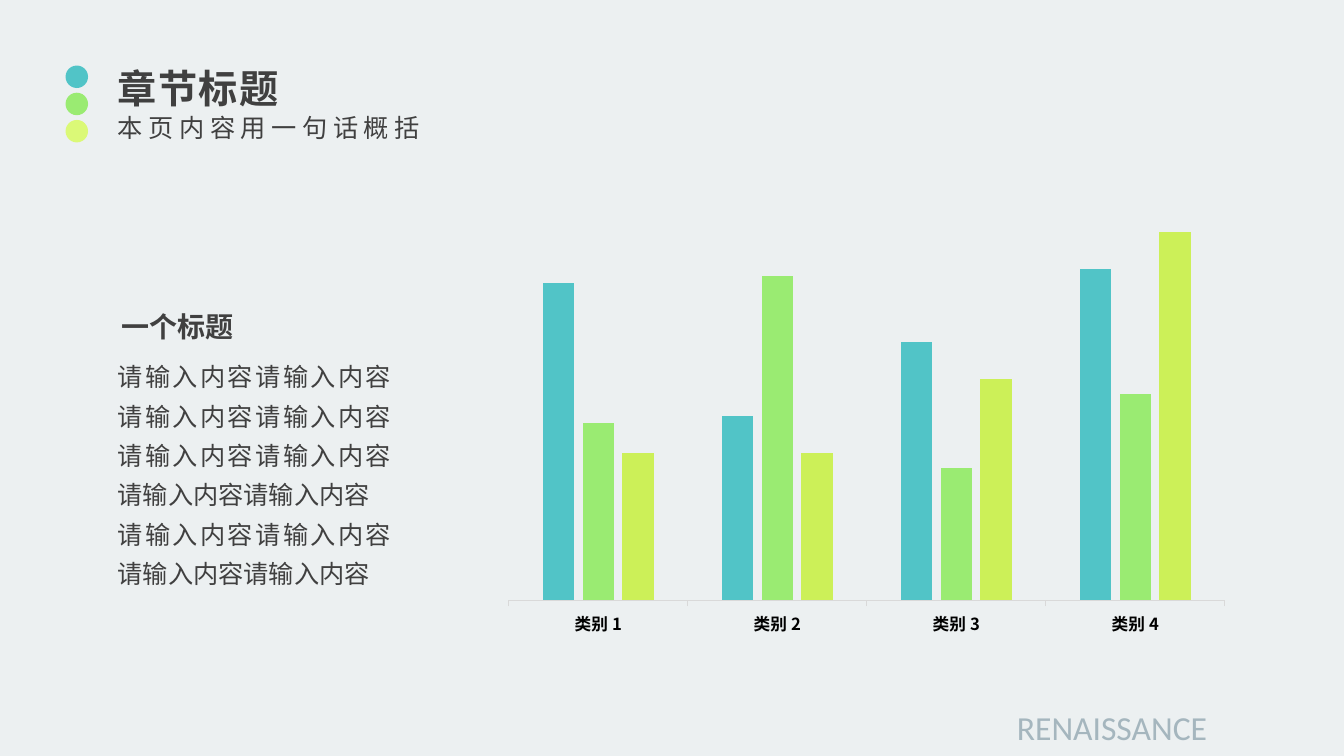
import dataclasses

import lxml.etree
import pptx
import pptx.chart.data
import pptx.dml.color
import pptx.enum.chart
import pptx.enum.shapes
import pptx.enum.text
import pptx.oxml.ns
import pptx.util


@dataclasses.dataclass(frozen=True)
class Theme:
    background: str = "ECF0F1"
    ink: str = "404040"
    black: str = "000000"
    axis_line: str = "D9D9D9"
    muted: str = "A5B6BE"
    dots: tuple = ("51C4C7", "9AEB72", "DBF977")
    bars: tuple = ("51C4C7", "9AEB72", "CCF058")
    cjk: str = "Noto Sans CJK SC"
    latin: str = "Calibri"
    title: float = 28
    brand: float = 24
    heading: float = 20
    body: float = 18
    category: float = 11.9
    chart: float = 10


def color(value):
    return pptx.dml.color.RGBColor.from_string(value)


def style_font(font, size, fill, face, bold=False, spacing=0):
    font.size = pptx.util.Pt(size)
    font.bold = bold
    font.name = face
    font.color.rgb = color(fill)
    properties = font._rPr
    east_asian = lxml.etree.SubElement(properties, pptx.oxml.ns.qn("a:ea"))
    east_asian.set("typeface", face)
    if spacing:
        properties.set("spc", str(spacing * 100))


def write(frame, *paragraphs, align=pptx.enum.text.PP_ALIGN.LEFT, leading=1.0, **font):
    frame.word_wrap = True
    frame.vertical_anchor = pptx.enum.text.MSO_ANCHOR.TOP
    frame.auto_size = pptx.enum.text.MSO_AUTO_SIZE.SHAPE_TO_FIT_TEXT
    for index, content in enumerate(paragraphs):
        paragraph = frame.add_paragraph() if index else frame.paragraphs[0]
        paragraph.alignment = align
        paragraph.line_spacing = leading
        run = paragraph.add_run()
        run.text = content
        style_font(run.font, **font)


class SlideBuilder:
    COLUMNS = 40

    def __init__(self, deck, theme):
        self.theme = theme
        self.cell = deck.slide_width / self.COLUMNS
        self.slide = deck.slides.add_slide(deck.slide_layouts[5])
        self.slide.background.fill.solid()
        self.slide.background.fill.fore_color.rgb = color(theme.background)

    def grid(self, *cells):
        return [pptx.util.Emu(round(count * self.cell)) for count in cells]

    def group(self):
        return self.slide.shapes.add_group_shape().shapes

    def title(self, content, box, **style):
        heading = self.slide.shapes.title
        heading.left, heading.top, heading.width, heading.height = self.grid(*box)
        write(heading.text_frame, content, **style)

    def text(self, *paragraphs, box, shapes=None, **style):
        shapes = self.slide.shapes if shapes is None else shapes
        write(shapes.add_textbox(*self.grid(*box)).text_frame, *paragraphs, **style)

    def dots(self, left, top, size, pitch):
        shapes = self.group()
        for index, fill in enumerate(self.theme.dots):
            dot = shapes.add_shape(
                pptx.enum.shapes.MSO_SHAPE.OVAL,
                *self.grid(left, top + index * pitch, size, size),
            )
            dot.shadow.inherit = False
            dot.fill.solid()
            dot.fill.fore_color.rgb = color(fill)
            dot.line.fill.background()

    def columns(self, categories, series, box, maximum):
        theme = self.theme
        figures = pptx.chart.data.CategoryChartData()
        figures.categories = categories
        for name, values in series.items():
            figures.add_series(name, values)
        kind = pptx.enum.chart.XL_CHART_TYPE.COLUMN_CLUSTERED
        chart = self.slide.shapes.add_chart(kind, *self.grid(*box), figures).chart
        style_font(chart.font, theme.chart, theme.black, theme.latin)
        chart.has_legend = False
        chart.has_title = False

        value_axis = chart.value_axis
        value_axis.minimum_scale = 0
        value_axis.maximum_scale = maximum
        value_axis.has_major_gridlines = False
        value_axis.visible = False

        category_axis = chart.category_axis
        category_axis.major_tick_mark = pptx.enum.chart.XL_TICK_MARK.OUTSIDE
        category_axis.format.line.color.rgb = color(theme.axis_line)
        category_axis.format.line.width = pptx.util.Pt(0.75)
        style_font(category_axis.tick_labels.font, theme.category, theme.black,
                   theme.cjk, bold=True)

        plot = chart.plots[0]
        plot.vary_by_categories = False
        plot.gap_width = 219
        plot.overlap = -27
        for bars, fill in zip(plot.series, theme.bars):
            bars.format.fill.solid()
            bars.format.fill.fore_color.rgb = color(fill)


def main():
    theme = Theme()
    deck = pptx.Presentation()
    deck.slide_width = pptx.util.Inches(13.33)
    deck.slide_height = pptx.util.Inches(7.5)
    page = SlideBuilder(deck, theme)
    ink = {"fill": theme.ink, "face": theme.cjk}
    margin = 3.21

    page.dots(left=1.95, top=1.95, size=0.67, pitch=0.81)
    page.columns(
        [f"类别 {number}" for number in range(1, 5)],
        {
            "Series 1": (86, 50, 70, 90),
            "Series 2": (48, 88, 36, 56),
            "Series 3": (40, 40, 60, 100),
        },
        box=(14.7, 4.41, 22.2, 14.8),
        maximum=120,
    )

    message = page.group()
    page.text("一个标题", box=(3.33, 9.06, 10.26, 1.32), shapes=message,
              size=theme.heading, bold=True, **ink)
    prompt = "请输入内容"
    page.text(prompt * 8, prompt * 4, box=(margin, 10.35, 8.73, 8.31), shapes=message,
              align=pptx.enum.text.PP_ALIGN.JUSTIFY, leading=1.3,
              size=theme.body, **ink)

    page.text("RENAISSANCE", box=(29.97, 20.91, 10.03, 1.5),
              size=theme.brand, fill=theme.muted, face=theme.latin)
    page.title("章节标题", box=(margin, 1.77, 7.29, 1.71),
               size=theme.title, bold=True, spacing=1, **ink)
    page.text("本页内容用一句话概括", box=(margin, 3.21, 10.35, 1.2),
              size=theme.body, spacing=4, **ink)
    deck.save("out.pptx")


if __name__ == "__main__":
    main()
